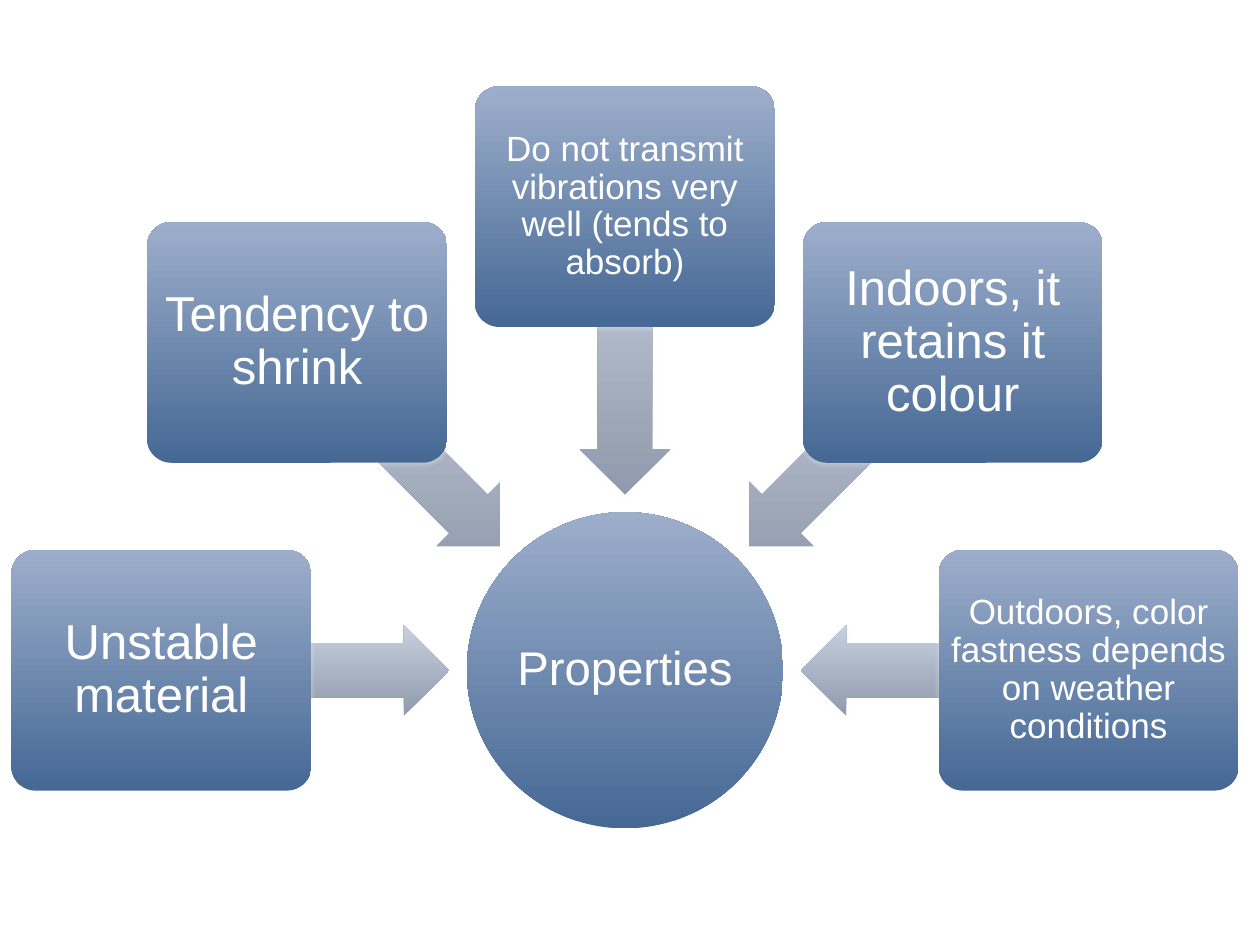
"""Builds a radial diagram of five material properties around a central circle."""
from math import cos, radians, sin

from lxml import etree
from pptx import Presentation
from pptx.dml.color import RGBColor
from pptx.enum.shapes import MSO_SHAPE
from pptx.enum.text import MSO_ANCHOR, PP_ALIGN
from pptx.oxml.ns import qn
from pptx.util import Inches, Pt

CIRCLE, BOX, ARROW = MSO_SHAPE.OVAL, MSO_SHAPE.ROUNDED_RECTANGLE, MSO_SHAPE.LEFT_ARROW
CENTER, MIDDLE = PP_ALIGN.CENTER, MSO_ANCHOR.MIDDLE

WHITE = RGBColor(0xFF, 0xFF, 0xFF)
BLUES = RGBColor(0x45, 0x68, 0x94), RGBColor(0x9D, 0xAE, 0xCB)
GREYS = RGBColor(0x8F, 0x9A, 0xAC), RGBColor(0xC8, 0xD0, 0xDE)
FONT = "Arial"

HUB = ("Properties", 27, 0.02)
PROPERTIES = [
    ("Unstable material", 28, 0.06),
    ("Tendency to shrink", 28, 0.06),
    ("Do not transmit vibrations very well (tends to absorb)", 20, 0.04),
    ("Indoors, it retains it colour", 28, 0.06),
    ("Outdoors, color fastness depends on weather conditions", 20, 0.04),
]

HUB_X, HUB_Y = 4.96, 5.32
HUB_SIZE, BOX_SIZE, ARROW_SIZE = (2.51, 2.51), (2.38, 1.91), (2.29, 0.72)
BOX_RADIUS, ARROW_RADIUS = 3.68, 2.54
FIRST_ANGLE, ANGLE_STEP = 180, 45


def add_glow(shape):
    effects = etree.SubElement(shape._element.spPr, qn("a:effectLst"))
    shadow = etree.SubElement(effects, qn("a:outerShdw"), blurRad=str(Pt(3)),
                              dist=str(Pt(1)), dir="5400000", rotWithShape="0")
    color = etree.SubElement(shadow, qn("a:srgbClr"), val=str(WHITE))
    etree.SubElement(color, qn("a:alpha"), val="35000")


def add_part(slide, kind, size, colors, radius=0, angle=0):
    width, height = size
    x = HUB_X + radius * cos(radians(angle))
    y = HUB_Y + radius * sin(radians(angle))
    part = slide.shapes.add_shape(kind, Inches(x - width / 2), Inches(y - height / 2),
                                  Inches(width), Inches(height))
    part.fill.gradient()
    part.fill.gradient_angle = 90
    for stop, color in zip(part.fill.gradient_stops, colors):
        stop.color.rgb = color
    part._element.spPr.find(qn("a:gradFill")).set("rotWithShape", "0")
    part.line.fill.background()
    add_glow(part)
    return part


def add_label(part, text, size, inset):
    frame = part.text_frame
    frame.word_wrap = True
    frame.vertical_anchor = MIDDLE
    frame.margin_left = frame.margin_right = Inches(inset)
    frame.margin_top = frame.margin_bottom = Inches(inset)
    paragraph = frame.paragraphs[0]
    paragraph.alignment = CENTER
    paragraph.line_spacing = 0.9
    run = paragraph.add_run()
    run.text = text
    run.font.name = FONT
    run.font.size = Pt(size)
    run.font.color.rgb = WHITE


def main():
    deck = Presentation()
    deck.slide_width, deck.slide_height = Inches(10), Inches(7.5)
    slide = deck.slides.add_slide(deck.slide_layouts[6])
    add_label(add_part(slide, CIRCLE, HUB_SIZE, BLUES), *HUB)
    for index, label in enumerate(PROPERTIES):
        angle = FIRST_ANGLE + index * ANGLE_STEP
        arrow = add_part(slide, ARROW, ARROW_SIZE, GREYS, ARROW_RADIUS, angle)
        arrow.rotation = angle % 360
        arrow.adjustments[0], arrow.adjustments[1] = 0.6, 0.5
        box = add_part(slide, BOX, BOX_SIZE, BLUES, BOX_RADIUS, angle)
        box.adjustments[0] = 0.1
        add_label(box, *label)
    deck.save("out.pptx")


if __name__ == "__main__":
    main()
